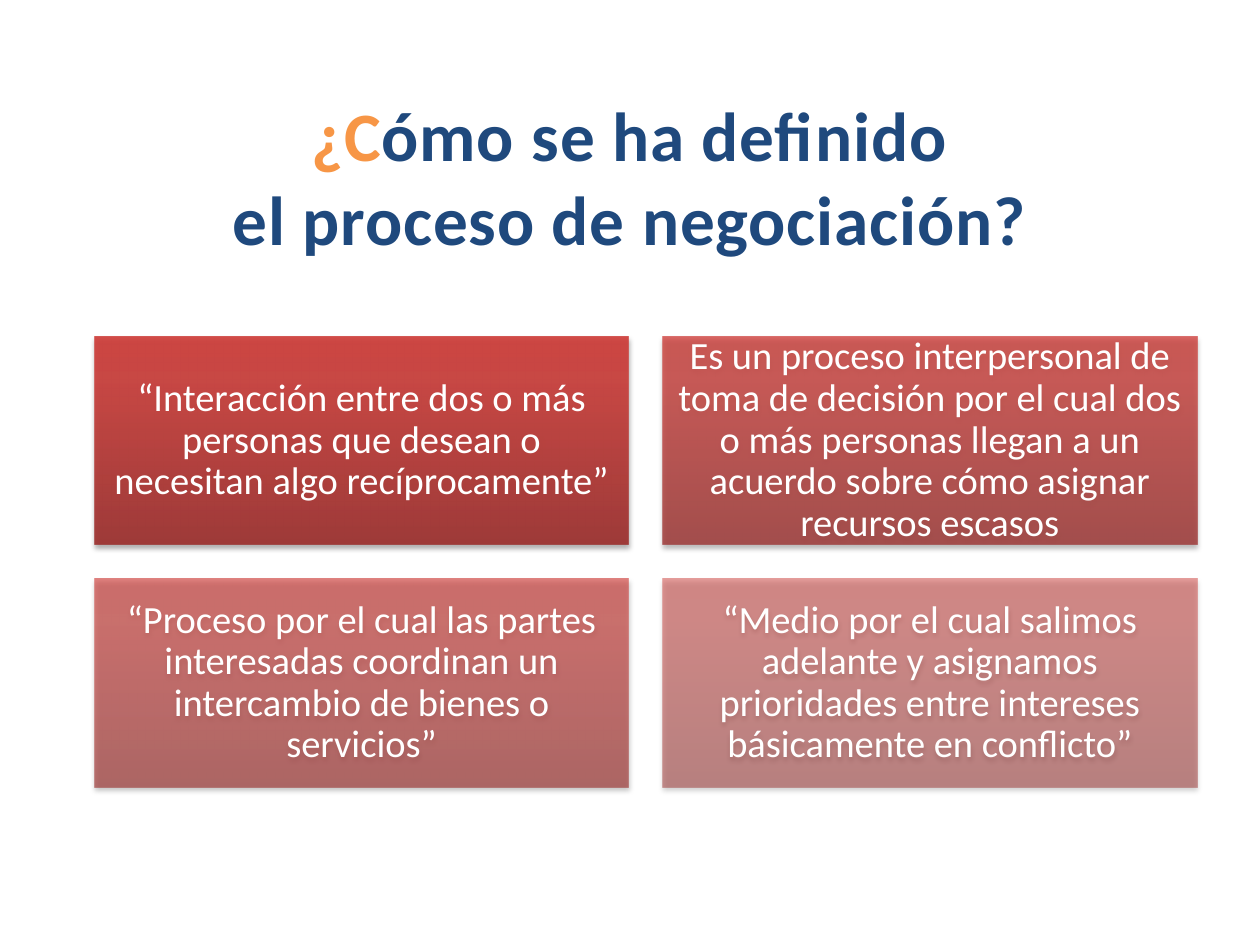
from pptx import Presentation
from pptx.dml.color import RGBColor
from pptx.enum.shapes import MSO_SHAPE
from pptx.enum.text import MSO_ANCHOR, MSO_AUTO_SIZE, PP_ALIGN
from pptx.oxml import parse_xml
from pptx.oxml.ns import nsdecls
from pptx.util import Inches, Pt

RECTANGLE = MSO_SHAPE.RECTANGLE
MIDDLE = MSO_ANCHOR.MIDDLE
CENTER = PP_ALIGN.CENTER
NO_AUTOFIT = MSO_AUTO_SIZE.NONE

FONT = "Calibri"
WHITE = RGBColor(0xFF, 0xFF, 0xFF)
ORANGE = RGBColor(0xF7, 0x96, 0x46)
NAVY = RGBColor(0x1F, 0x49, 0x7D)
BLACK = RGBColor(0x00, 0x00, 0x00)
RED_STOPS = [
    (0, RGBColor(0x9C, 0x2F, 0x2D)),
    (80, RGBColor(0xCB, 0x3E, 0x3A)),
    (100, RGBColor(0xCE, 0x3B, 0x37)),
]

TITLE_SPANS = [
    ("¿C", ORANGE),
    ("ómo se ha definido\vel proceso de negociación?", NAVY),
]
# Each definition with the opacity of its card in percent
DEFINITIONS = [
    ("“Interacción entre dos o más personas que desean o necesitan algo "
     "recíprocamente”", 90),
    ("Es un proceso interpersonal de toma de decisión por el cual dos o más "
     "personas llegan a un acuerdo sobre cómo asignar recursos escasos", 77),
    ("“Proceso por el cual las partes interesadas coordinan un intercambio de "
     "bienes o servicios”", 63),
    ("“Medio por el cual salimos adelante y asignamos prioridades entre "
     "intereses básicamente en conflicto”", 50),
]


def color_xml(color, opacity):
    return (f'<a:srgbClr val="{color}">'
            f'<a:alpha val="{opacity * 1000}"/></a:srgbClr>')


def style_card(card, opacity):
    """Give the card a bottom-to-top red gradient and a soft drop shadow."""
    card.line.fill.background()
    stops = "".join(
        f'<a:gs pos="{position * 1000}">{color_xml(color, opacity)}</a:gs>'
        for position, color in RED_STOPS)
    gradient = parse_xml(
        f'<a:gradFill {nsdecls("a")} rotWithShape="1"><a:gsLst>{stops}</a:gsLst>'
        '<a:lin ang="16200000" scaled="0"/></a:gradFill>')
    shadow = parse_xml(
        f'<a:effectLst {nsdecls("a")}><a:outerShdw blurRad="{Pt(3.1)}" '
        f'dist="{Pt(1.8)}" dir="5400000" rotWithShape="0">'
        f'{color_xml(BLACK, 35)}</a:outerShdw></a:effectLst>')
    properties = card.element.spPr
    properties.insert(2, gradient)
    properties.append(shadow)


def place_title(page, left, top, width, height):
    title = page.shapes.title
    title.left, title.top, title.width, title.height = left, top, width, height
    frame = title.text_frame
    frame.auto_size = NO_AUTOFIT
    frame.vertical_anchor = MIDDLE
    frame.margin_bottom = Inches(0.71)  # lifts the two lines within the box
    para = frame.paragraphs[0]
    para.alignment = CENTER
    para.font.name = FONT
    para.font.size = Pt(39.6)
    para.font.bold = True
    for text, color in TITLE_SPANS:
        for index, line in enumerate(text.split("\v")):
            if index:
                para.add_line_break()
            span = para.add_run()
            span.text = line
            span.font.color.rgb = color
            span.font.element.set("spc", "50") if hasattr(span.font, "element") \
                else span._r.get_or_add_rPr().set("spc", "50")


def place_card(page, text, opacity, left, top, width, height):
    card = page.shapes.add_shape(RECTANGLE, left, top, width, height)
    style_card(card, opacity)
    frame = card.text_frame
    frame.word_wrap = True
    frame.vertical_anchor = MIDDLE
    frame.margin_left = frame.margin_right = Inches(0.09)
    frame.margin_top = frame.margin_bottom = Inches(0.09)
    para = frame.paragraphs[0]
    para.text = text
    para.alignment = CENTER
    para.line_spacing = 0.9
    para.font.name = FONT
    para.font.size = Pt(22)
    para.font.color.rgb = WHITE


def place_definitions(page, left, top, width, height, gap, columns=2):
    rows = len(DEFINITIONS) // columns
    card_width = (width - gap * (columns - 1)) // columns
    card_height = (height - gap * (rows - 1)) // rows
    for index, (text, opacity) in enumerate(DEFINITIONS):
        row, column = divmod(index, columns)
        place_card(page, text, opacity,
                   left + column * (card_width + gap),
                   top + row * (card_height + gap),
                   card_width, card_height)


def main():
    deck = Presentation()
    deck.slide_width, deck.slide_height = Inches(10), Inches(7.5)
    page = deck.slides.add_slide(deck.slide_layouts.get_by_name("Title Only"))
    place_title(page, Inches(0.5), Inches(1.1), Inches(9), Inches(1.25))
    place_definitions(page, Inches(0.75), Inches(2.67), Inches(8.75),
                      Inches(3.58), gap=Inches(0.27))
    deck.save("out.pptx")


if __name__ == "__main__":
    main()
